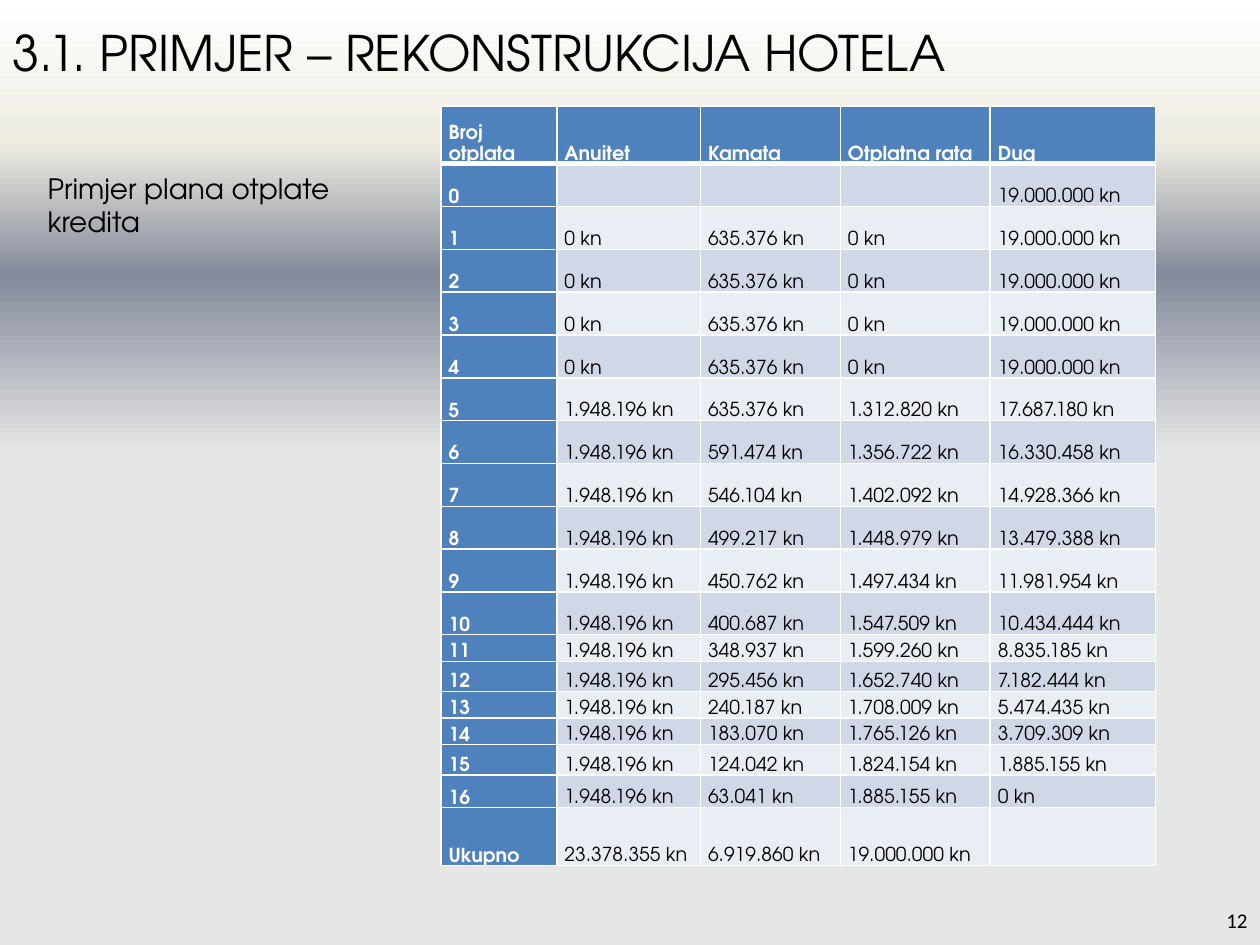
from lxml import etree
from pptx import Presentation
from pptx.dml.color import RGBColor
from pptx.enum import text
from pptx.oxml import ns
from pptx.util import Inches, Pt

FONT = "TeX Gyre Adventor"
BLACK = RGBColor(0x00, 0x00, 0x00)
WHITE = RGBColor(0xFF, 0xFF, 0xFF)
BLUE = RGBColor(0x4F, 0x81, 0xBD)
BANDS = (RGBColor(0xE9, 0xED, 0xF4), RGBColor(0xD0, 0xD8, 0xE8))
CREAM = RGBColor(0xEE, 0xEC, 0xE1)
SLATE = RGBColor(0x84, 0x8A, 0x9B)
GREY = RGBColor(0xE6, 0xE6, 0xE6)
BACKGROUND_STOPS = [(0, WHITE), (15, CREAM), (29, SLATE), (48, GREY), (73, GREY), (100, GREY)]

COLUMN_WIDTHS = [0.92, 1.14, 1.11, 1.19, 1.31]
ROW_HEIGHTS = [0.46] + [0.34] * 11 + [0.21, 0.24, 0.19, 0.21, 0.24, 0.26, 0.46]
HEADER = ["Broj otplata", "Anuitet", "Kamata", "Otplatna rata", "Dug"]
GRACE = ["0", "635.376", "0", "19.000.000"]
ANNUITY = "1.948.196"
REPAYMENTS = [
    ("635.376", "1.312.820", "17.687.180"),
    ("591.474", "1.356.722", "16.330.458"),
    ("546.104", "1.402.092", "14.928.366"),
    ("499.217", "1.448.979", "13.479.388"),
    ("450.762", "1.497.434", "11.981.954"),
    ("400.687", "1.547.509", "10.434.444"),
    ("348.937", "1.599.260", "8.835.185"),
    ("295.456", "1.652.740", "7.182.444"),
    ("240.187", "1.708.009", "5.474.435"),
    ("183.070", "1.765.126", "3.709.309"),
    ("124.042", "1.824.154", "1.885.155"),
    ("63.041", "1.885.155", "0"),
]
TOTAL = ["23.378.355", "6.919.860", "19.000.000", ""]


def plan_rows():
    """Return the rows of the repayment plan, header and total included."""
    amounts = [["", "", "", "19.000.000"]] + [GRACE] * 4
    amounts += [[ANNUITY, *repayment] for repayment in REPAYMENTS]
    labels = [str(number) for number in range(len(amounts))] + ["Ukupno"]
    return [HEADER] + [
        [label] + [f"{value} kn" if value else "" for value in row]
        for label, row in zip(labels, amounts + [TOTAL])
    ]


def style_run(r, size, color, bold=False, font=FONT):
    """Set the font of a run."""
    r.font.name = font
    r.font.size = Pt(size)
    r.font.bold = bold
    r.font.color.rgb = color


def set_background(s):
    """Fill the slide with the vertical gradient."""
    fill = s.background.fill
    fill.gradient()
    fill.gradient_angle = 270
    stops = s.background._cSld.find(".//" + ns.qn("a:gsLst"))
    for stop in list(stops):
        stops.remove(stop)
    for position, color in BACKGROUND_STOPS:
        stop = etree.SubElement(stops, ns.qn("a:gs"), pos=str(position * 1000))
        etree.SubElement(stop, ns.qn("a:srgbClr"), val=str(color))


def add_text(s, box, content, size, anchor=text.MSO_ANCHOR.MIDDLE,
             align=text.PP_ALIGN.LEFT, font=FONT):
    """Add a wrapped text box."""
    tf = s.shapes.add_textbox(*map(Inches, box)).text_frame
    tf.word_wrap = True
    tf.vertical_anchor = anchor
    tf.text = content
    p = tf.paragraphs[0]
    p.alignment = align
    style_run(p.runs[0], size, BLACK, font=font)


def set_borders(cell, top, bottom):
    """Draw white borders with the given top and bottom widths."""
    tc_pr = cell._tc.get_or_add_tcPr()
    widths = {"lnL": 1, "lnR": 1, "lnT": top, "lnB": bottom}
    for index, (side, width) in enumerate(widths.items()):
        line = etree.Element(ns.qn(f"a:{side}"), w=str(Pt(width)))
        fill = etree.SubElement(line, ns.qn("a:solidFill"))
        etree.SubElement(fill, ns.qn("a:srgbClr"), val=str(WHITE))
        tc_pr.insert(index, line)


def fill_cell(cell, content, row, column):
    """Write and style one cell of the plan."""
    heading = row == 0 or column == 0
    cell.fill.solid()
    cell.fill.fore_color.rgb = BLUE if heading else BANDS[row % 2]
    set_borders(cell, 3 if row == 1 else 1, 3 if row == 0 else 1)
    cell.margin_left = cell.margin_right = Inches(0.06)
    cell.margin_top = cell.margin_bottom = 0
    cell.vertical_anchor = text.MSO_ANCHOR.BOTTOM
    p = cell.text_frame.paragraphs[0]
    if not content:
        p._p.get_or_add_endParaRPr().set("sz", "1100")
        return
    p.text = content
    p.line_spacing = 1.15
    p.space_after = Pt(10)
    style_run(p.runs[0], 11, WHITE if heading else BLACK, heading)


def add_plan(s):
    """Add the repayment plan table."""
    rows = plan_rows()
    box = (3.5, 0.84, sum(COLUMN_WIDTHS), sum(ROW_HEIGHTS))
    table = s.shapes.add_table(len(rows), len(HEADER), *map(Inches, box)).table
    table.first_col = True
    for column, width in zip(table.columns, COLUMN_WIDTHS):
        column.width = Inches(width)
    for row, height in zip(table.rows, ROW_HEIGHTS):
        row.height = Inches(height)
    for i, row in enumerate(rows):
        for j, content in enumerate(row):
            fill_cell(table.cell(i, j), content, i, j)


def main():
    """Build the slide and save it."""
    prs = Presentation()
    prs.slide_width, prs.slide_height = Inches(10), Inches(7.5)
    s = prs.slides.add_slide(prs.slide_layouts[6])
    set_background(s)
    add_text(s, (9.48, 7.1, 0.52, 0.4), "12", 12, align=text.PP_ALIGN.RIGHT, font="Calibri")
    add_plan(s)
    add_text(s, (0.28, 1.31, 2.99, 0.63), "Primjer plana otplate kredita", 16,
             anchor=text.MSO_ANCHOR.TOP)
    add_text(s, (0, -0.21, 9.88, 1.25), "3.1. PRIMJER – REKONSTRUKCIJA HOTELA", 28)
    prs.save("out.pptx")


if __name__ == "__main__":
    main()
